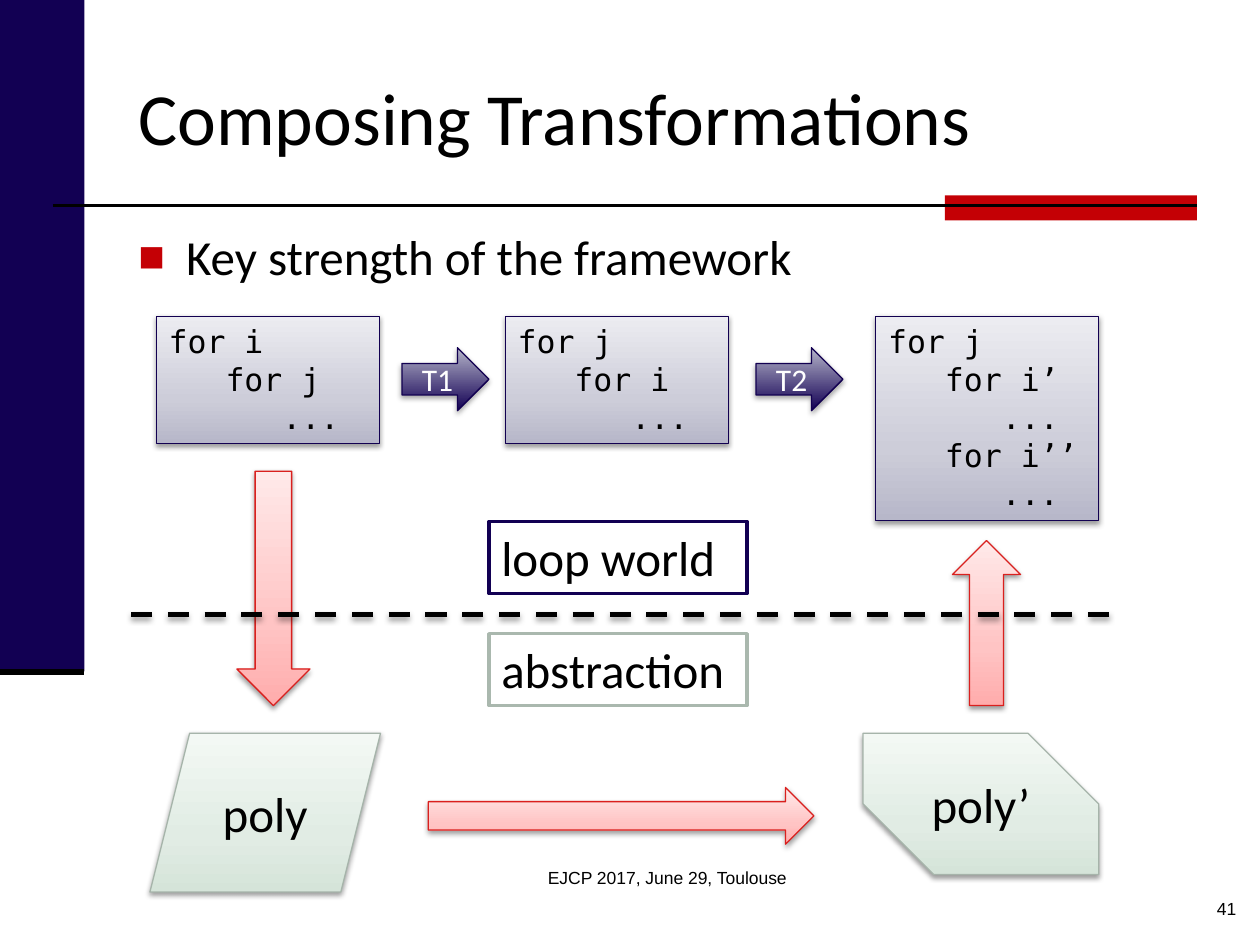
import pptx
import pptx.util
import pptx.dml.color
import pptx.oxml
import pptx.oxml.ns
from lxml import etree
from pptx.enum.dml import MSO_LINE
from pptx.enum.shapes import MSO_CONNECTOR, MSO_SHAPE
from pptx.enum.text import MSO_ANCHOR, PP_ALIGN

Inches = pptx.util.Inches
Pt = pptx.util.Pt
qn = pptx.oxml.ns.qn

NAVY, RED, BLACK, WHITE = "120053", "C40005", "000000", "FFFFFF"
GRAY_STOPS = [(0, "B7B7C9"), (35, "CDCDD9"), (100, "ECECF1")]
NAVY_STOPS = [(0, NAVY), (100, "B6B5CA")]
PINK_STOPS = [(0, "FFACAC"), (35, "FFC4C4"), (100, "FFE9E9")]
GREEN_STOPS = [(0, "D5E4D9"), (35, "E1ECE4"), (100, "F3F8F4")]


def rgb(color):
    return pptx.dml.color.RGBColor.from_string(color)


def add_element(parent, tag, **attributes):
    return etree.SubElement(parent, qn(tag), {k: str(v) for k, v in attributes.items()})


class SlideBuilder:
    body_font = "Calibri"
    code_font = "DejaVu Sans Mono"
    small_font = "Arial"

    def __init__(self, slide):
        self.slide = slide

    def set_text(self, shape, text, size, font=body_font, color=BLACK,
                 align=PP_ALIGN.LEFT, anchor=MSO_ANCHOR.TOP, wrap=True):
        frame = shape.text_frame
        frame.text = text
        frame.word_wrap = wrap
        frame.vertical_anchor = anchor
        for paragraph in frame.paragraphs:
            paragraph.alignment = align
            paragraph.font.size = Pt(size)
            paragraph.font.name = font
            paragraph.font.color.rgb = rgb(color)

    def text(self, box, text, size, **style):
        label = self.slide.shapes.add_textbox(*map(Inches, box))
        self.set_text(label, text, size, **style)

    def bullet(self, box, text, size):
        body = self.slide.shapes.add_textbox(*map(Inches, box))
        properties = body.text_frame.paragraphs[0]._p.get_or_add_pPr()
        properties.set("marL", str(Inches(0.38)))
        properties.set("indent", str(-Inches(0.38)))
        bullet_color = add_element(properties, "a:buClr")
        add_element(bullet_color, "a:srgbClr", val=RED)
        add_element(properties, "a:buSzPct", val=90000)
        add_element(properties, "a:buFont", typeface=self.small_font)
        add_element(properties, "a:buChar", char="■")
        paragraph = body.text_frame.paragraphs[0]
        paragraph.text = text
        paragraph.font.size = Pt(size)
        paragraph.font.name = self.body_font
        paragraph.font.color.rgb = rgb(BLACK)
        body.text_frame.word_wrap = True

    def shadow(self, effects, opacity, distance):
        outer = add_element(effects, "a:outerShdw", blurRad=Pt(3.1), dist=Pt(distance),
                            dir=5400000, rotWithShape=0)
        color = add_element(outer, "a:srgbClr", val=BLACK)
        add_element(color, "a:alpha", val=opacity * 1000)

    def shape(self, kind, box, fill, line=None, width=0.75):
        shape = self.slide.shapes.add_shape(kind, *map(Inches, box))
        shape.shadow.inherit = False
        shape.fill.solid()
        shape.fill.fore_color.rgb = rgb(fill)
        if line:
            shape.line.color.rgb = rgb(line)
            shape.line.width = Pt(width)
        else:
            shape.line.fill.background()
        return shape

    def shaded(self, kind, box, stops, line, opacity=38, distance=1.6):
        """Add a shape with a shadow and a gradient that runs from bottom to top."""
        shape = self.shape(kind, box, WHITE, line)
        shape.fill.gradient()
        shape.fill.gradient_angle = 90
        stop_list = shape._element.spPr.find(".//" + qn("a:gsLst"))
        for old_stop in list(stop_list):
            stop_list.remove(old_stop)
        for position, color in stops:
            stop = add_element(stop_list, "a:gs", pos=position * 1000)
            add_element(stop, "a:srgbClr", val=color)
        self.shadow(shape._element.spPr.find(qn("a:effectLst")), opacity, distance)
        return shape

    def line(self, x1, y1, x2, y2, width, dashed=False):
        line = self.slide.shapes.add_connector(
            MSO_CONNECTOR.STRAIGHT, *map(Inches, (x1, y1, x2, y2)))
        line.line.color.rgb = rgb(BLACK)
        line.line.width = Pt(width)
        if dashed:
            line.line.dash_style = MSO_LINE.DASH
        effects = add_element(line._element.spPr, "a:effectLst")
        if dashed:
            self.shadow(effects, 38, 1.6)

    def code(self, left, height, text):
        block = self.shaded(MSO_SHAPE.RECTANGLE, (left, 2.51, 1.77, height), GRAY_STOPS, "120051")
        self.set_text(block, text, 18, font=self.code_font)

    def transformation(self, left, name):
        arrow = self.shaded(MSO_SHAPE.RIGHT_ARROW, (left, 2.76, 0.69, 0.5), NAVY_STOPS,
                            "120051", opacity=35, distance=1.8)
        self.set_text(arrow, name, 18, color=WHITE, align=PP_ALIGN.CENTER,
                      anchor=MSO_ANCHOR.MIDDLE)

    def mapping(self, kind, box):
        self.shaded(kind, box, PINK_STOPS, "DA201E")

    def polyhedron(self, kind, box, name):
        domain = self.shaded(kind, box, GREEN_STOPS, "A6B4AA")
        self.set_text(domain, name, 28, align=PP_ALIGN.CENTER, anchor=MSO_ANCHOR.MIDDLE)
        return domain

    def world(self, top, name, line):
        label = self.shape(MSO_SHAPE.RECTANGLE, (3.88, top, 2.05, 0.57), WHITE, line, 2)
        self.set_text(label, name, 28, wrap=False)


def main():
    presentation = pptx.Presentation()
    presentation.slide_width = Inches(10)
    presentation.slide_height = Inches(7.5)
    page = SlideBuilder(presentation.slides.add_slide(presentation.slide_layouts[6]))

    page.shape(MSO_SHAPE.RECTANGLE, (0, 0, 0.67, 5.33), NAVY)
    page.shape(MSO_SHAPE.RECTANGLE, (7.5, 1.55, 2, 0.2), RED)
    page.line(0.42, 1.63, 9.5, 1.63, 1.5)
    page.line(0, 5.33, 0.67, 5.33, 3.5)
    page.text((1, 0.3, 8.5, 1.25), "Composing Transformations", 42, anchor=MSO_ANCHOR.MIDDLE)
    page.bullet((1, 1.75, 8.5, 4.95), "Key strength of the framework", 28)
    page.text((7.83, 7.08, 2.08, 0.25), "41", 10, font=page.small_font, align=PP_ALIGN.RIGHT)

    page.code(1.24, 1.01, "for i\n   for j\n      ...")
    page.code(4.01, 1.01, "for j\n   for i\n      ...")
    page.code(6.95, 1.62, "for j\n   for i’\n      ...\n   for i’’\n      ...")
    page.transformation(3.19, "T1")
    page.transformation(6, "T2")

    page.mapping(MSO_SHAPE.DOWN_ARROW, (1.88, 3.74, 0.58, 1.86))
    page.polyhedron(MSO_SHAPE.PARALLELOGRAM, (1.19, 5.82, 1.83, 1.26), "poly")
    page.mapping(MSO_SHAPE.RIGHT_ARROW, (3.4, 6.25, 3.06, 0.45))
    transformed = page.polyhedron(MSO_SHAPE.SNIP_2_DIAG_RECTANGLE,
                                  (6.85, 5.82, 1.87, 1.12), "poly’")
    transformed.adjustments[0] = 0
    transformed.adjustments[1] = 0.5
    page.mapping(MSO_SHAPE.UP_ARROW, (7.56, 4.29, 0.54, 1.31))

    page.line(1.04, 4.88, 8.87, 4.88, 3, dashed=True)
    page.world(4.14, "loop world", NAVY)
    page.world(5.03, "abstraction", "AAB8AE")
    page.text((3.67, 6.83, 3.25, 0.5), "EJCP 2017, June 29, Toulouse", 10,
              font=page.small_font, align=PP_ALIGN.CENTER)

    presentation.save("out.pptx")


if __name__ == "__main__":
    main()
